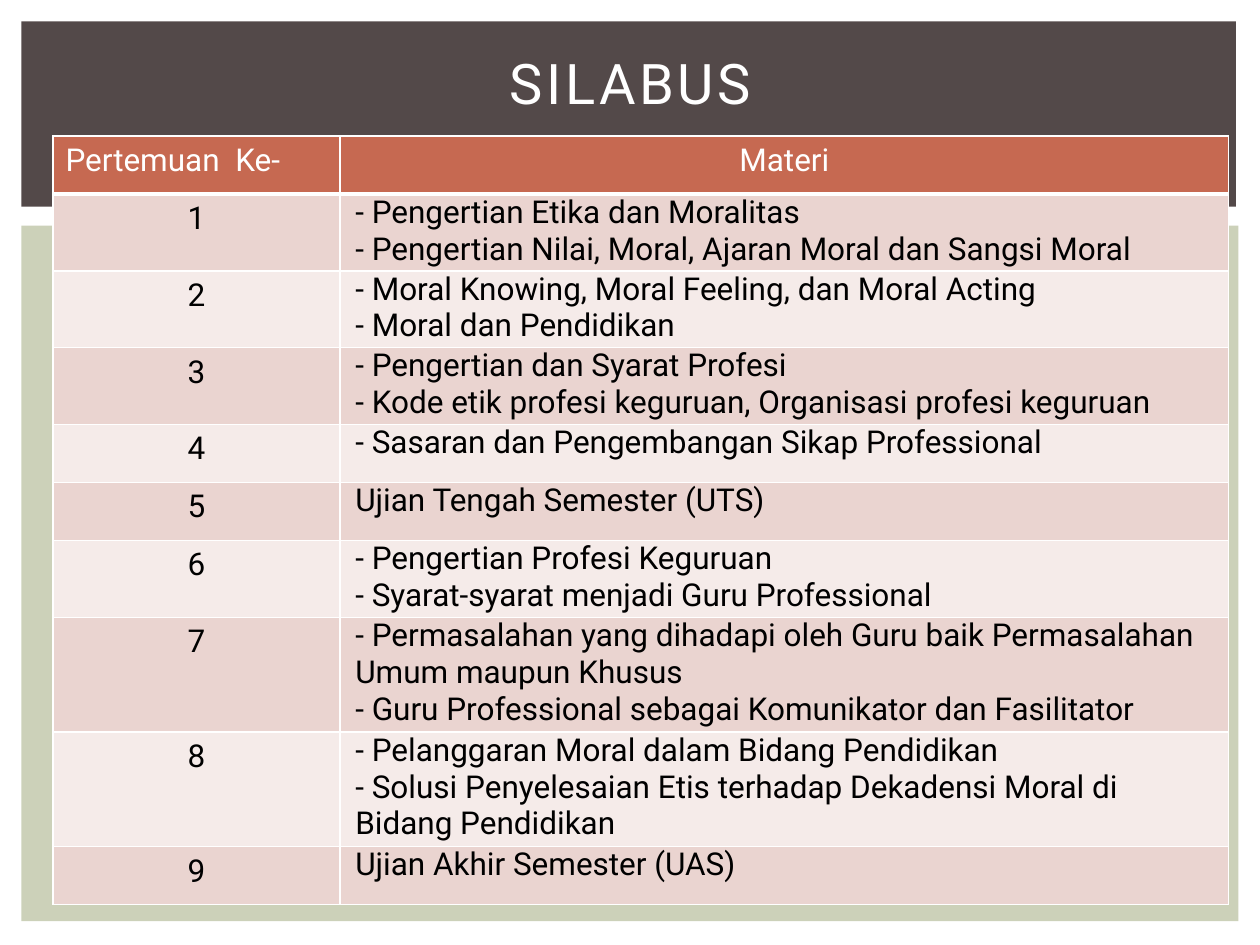
from lxml.etree import SubElement
from pptx import Presentation
from pptx.dml.color import RGBColor
from pptx.enum.shapes import MSO_SHAPE
from pptx.enum.text import MSO_ANCHOR, PP_ALIGN
from pptx.oxml.ns import qn
from pptx.util import Inches, Pt

FONT = "Roboto"
WHITE, BLACK = "FFFFFF", "000000"
SAGE, CHARCOAL, TERRACOTTA = "CCD1B9", "534949", "C66951"
BANDS = ("EAD4D0", "F5EBE9")
COLUMN_WIDTHS = (2.28, 7.05)
HEADER_HEIGHT = 0.46
ROW_HEIGHTS = {1: 0.46, 2: 0.61, 3: 0.91}
MEETINGS = [
    (2, ["- Pengertian Etika dan Moralitas",
         "- Pengertian Nilai, Moral, Ajaran Moral dan Sangsi Moral"]),
    (2, ["- Moral Knowing, Moral Feeling, dan Moral Acting",
         "- Moral dan Pendidikan"]),
    (2, ["- Pengertian dan Syarat Profesi",
         "- Kode etik profesi keguruan, Organisasi profesi keguruan"]),
    (1, ["- Sasaran dan Pengembangan Sikap Professional"]),
    (1, ["Ujian Tengah Semester (UTS)"]),
    (2, ["- Pengertian Profesi Keguruan",
         "- Syarat-syarat menjadi Guru Professional"]),
    (3, ["- Permasalahan yang dihadapi oleh Guru baik Permasalahan Umum maupun Khusus",
         "- Guru Professional sebagai Komunikator dan Fasilitator"]),
    (3, ["- Pelanggaran Moral dalam Bidang Pendidikan",
         "- Solusi Penyelesaian Etis terhadap Dekadensi Moral di Bidang Pendidikan"]),
    (1, ["Ujian Akhir Semester (UAS)"]),
]


def paint(color_format, color):
    """Give a fill a solid colour from a hex string."""
    color_format.solid()
    color_format.fore_color.rgb = RGBColor.from_string(color)


def write(text_frame, lines, size, color, alignment=PP_ALIGN.LEFT):
    """Write each line as a paragraph of one run and return the last run."""
    for index, line in enumerate(lines):
        paragraph = text_frame.add_paragraph() if index else text_frame.paragraphs[0]
        paragraph.alignment = alignment
        run = paragraph.add_run()
        run.text = line
        run.font.name, run.font.size, run.font.bold = FONT, Pt(size), False
        paint(run.font.fill, color)
    return run


def add_panel(slide, left, top, width, height, color):
    """Add a plain background rectangle."""
    panel = slide.shapes.add_shape(
        MSO_SHAPE.RECTANGLE, Inches(left), Inches(top), Inches(width), Inches(height))
    panel.shadow.inherit = False
    paint(panel.fill, color)
    panel.line.fill.background()


def add_title(slide, title):
    """Add the centred, letter-spaced title."""
    box = slide.shapes.add_textbox(Inches(0.42), Inches(0.39), Inches(9.17), Inches(0.53))
    box.text_frame.word_wrap = True
    box.text_frame.vertical_anchor = MSO_ANCHOR.MIDDLE
    run = write(box.text_frame, [title], 32, WHITE, PP_ALIGN.CENTER)
    run.font._element.set("spc", "200")


def style_cell(cell, color, bottom=1):
    """Give a cell white borders and a solid fill."""
    properties = cell._tc.get_or_add_tcPr()
    for side, width in (("L", 1), ("R", 1), ("T", 1), ("B", bottom)):
        line = SubElement(properties, qn(f"a:ln{side}"), w=str(Pt(width)))
        SubElement(SubElement(line, qn("a:solidFill")), qn("a:srgbClr"), val=WHITE)
    paint(cell.fill, color)


def add_syllabus(slide):
    """Add the table of meetings and their topics."""
    heights = [HEADER_HEIGHT] + [ROW_HEIGHTS[count] for count, _ in MEETINGS]
    table = slide.shapes.add_table(
        len(heights), len(COLUMN_WIDTHS), Inches(0.42), Inches(1.08),
        Inches(sum(COLUMN_WIDTHS)), Inches(sum(heights))).table
    for column, width in zip(table.columns, COLUMN_WIDTHS):
        column.width = Inches(width)
    for row, height in zip(table.rows, heights):
        row.height = Inches(height)
    headers = (("Pertemuan  Ke-", PP_ALIGN.LEFT), ("Materi", PP_ALIGN.CENTER))
    for cell, (header, alignment) in zip(table.rows[0].cells, headers):
        style_cell(cell, TERRACOTTA, bottom=3)
        write(cell.text_frame, [header], 18, WHITE, alignment)
    for number, (_, topics) in enumerate(MEETINGS, start=1):
        number_cell, topic_cell = table.rows[number].cells
        for cell in (number_cell, topic_cell):
            style_cell(cell, BANDS[(number - 1) % 2])
        topic_cell.margin_left = topic_cell.margin_right = Inches(0.12)
        topic_cell.margin_top = topic_cell.margin_bottom = 0
        write(number_cell.text_frame, [str(number)], 18, BLACK, PP_ALIGN.CENTER)
        write(topic_cell.text_frame, topics, 18, BLACK)


def main():
    """Build and save the syllabus slide."""
    presentation = Presentation()
    presentation.slide_width, presentation.slide_height = Inches(10), Inches(7.5)
    slide = presentation.slides.add_slide(presentation.slide_layouts[6])
    paint(slide.background.fill, WHITE)
    add_panel(slide, 0.17, 1.79, 9.66, 5.52, SAGE)
    add_panel(slide, 0.17, 0.17, 9.64, 1.47, CHARCOAL)
    add_syllabus(slide)
    add_title(slide, "SILABUS")
    presentation.save("out.pptx")


if __name__ == "__main__":
    main()
